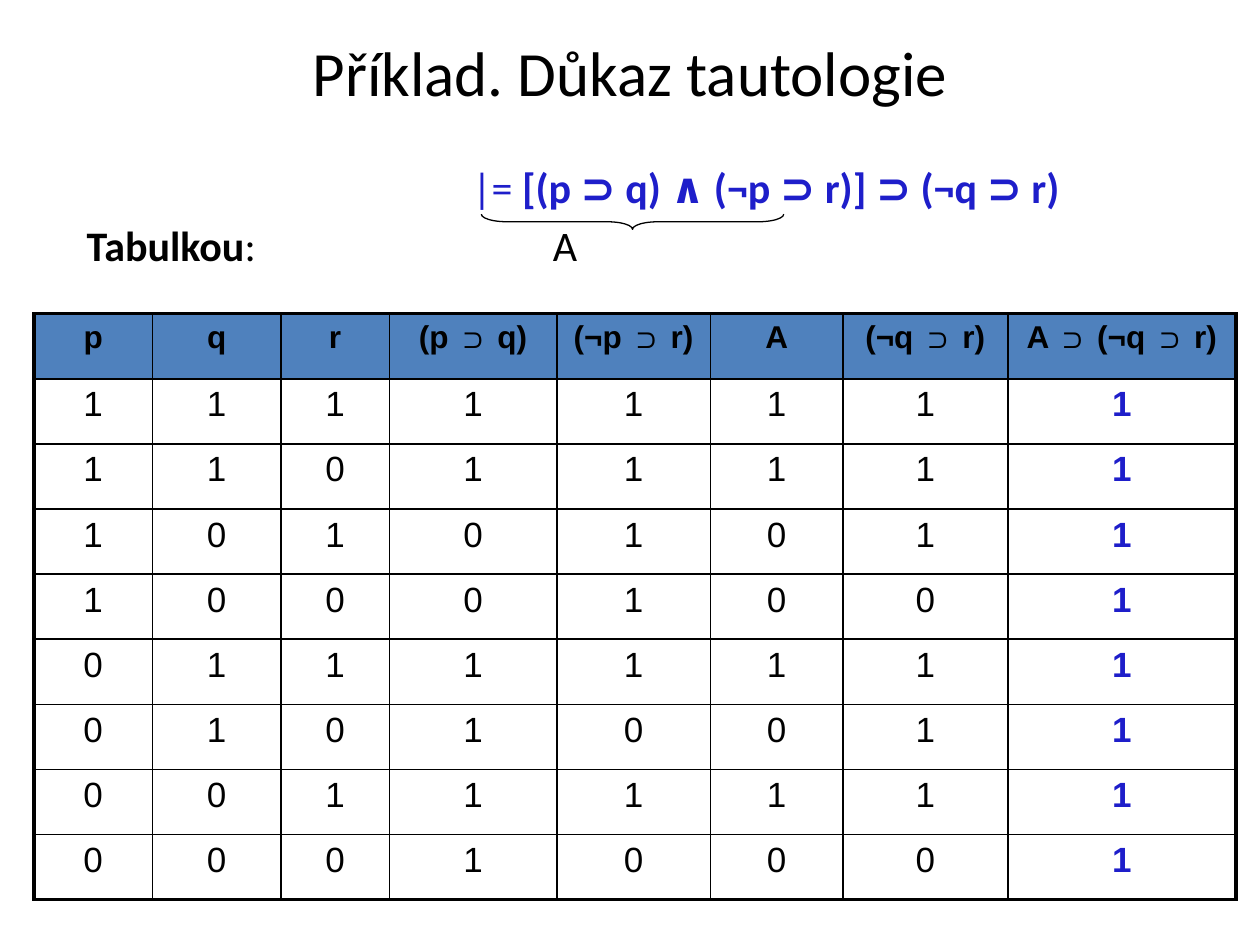
from itertools import product

from lxml.etree import SubElement
from pptx import Presentation
from pptx.dml.color import RGBColor
from pptx.enum.shapes import MSO_SHAPE
from pptx.enum.text import MSO_ANCHOR, PP_ALIGN
from pptx.oxml.ns import qn
from pptx.util import Inches, Pt

BLACK = RGBColor(0x00, 0x00, 0x00)
BLUE = RGBColor(0x1E, 0x1E, 0xCA)
HEADER_BLUE = RGBColor(0x4F, 0x81, 0xBD)
HEADERS = ["p", "q", "r", "(p ⊃ q)", "(¬p ⊃ r)", "A", "(¬q ⊃ r)", "A ⊃ (¬q ⊃ r)"]
COLUMN_WIDTHS = [0.94, 1.02, 0.86, 1.33, 1.22, 1.05, 1.31, 1.81]
ROW_HEIGHT = 4.65 / 9
THIN, THICK = Pt(1), Pt(2.25)


def format_run(run, font_name, size, color, bold=False):
    """Set the font of one run."""
    font = run.font
    font.name = font_name
    font.size = Pt(size)
    font.color.rgb = color
    font.bold = bold


def add_text_box(slide, left, top, width, height, anchor):
    """Add a wrapping text box and return its text frame."""
    shape = slide.shapes.add_textbox(Inches(left), Inches(top), Inches(width), Inches(height))
    text_frame = shape.text_frame
    text_frame.word_wrap = True
    text_frame.vertical_anchor = anchor
    return text_frame


def add_title(slide, text):
    """Add the centred slide title."""
    text_frame = add_text_box(slide, 0.5, 0.3, 9, 0.54, MSO_ANCHOR.MIDDLE)
    text_frame.text = text
    paragraph = text_frame.paragraphs[0]
    paragraph.alignment = PP_ALIGN.CENTER
    format_run(paragraph.runs[0], "Calibri", 36, BLACK)


def fill_tabbed_line(paragraph, tab_position, color, parts):
    """Write (text, bold) parts into a paragraph with one tab stop."""
    tab_list = SubElement(paragraph._p.get_or_add_pPr(), qn("a:tabLst"))
    SubElement(tab_list, qn("a:tab"), pos=str(Inches(tab_position)), algn="l")
    for text, bold in parts:
        run = paragraph.add_run()
        run.text = text
        format_run(run, "Calibri", 24, color, bold)


def add_statement(slide):
    """Add the proved formula and the line that introduces the table."""
    text_frame = add_text_box(slide, 0.59, 1.23, 8.74, 1.1, MSO_ANCHOR.TOP)
    formula = [("\t|= ", False), ("[(p ⊃ q) ∧ (¬p ⊃ r)] ⊃ (¬q ⊃ r)", True)]
    fill_tabbed_line(text_frame.paragraphs[0], 3.06, BLUE, formula)
    paragraph = text_frame.add_paragraph()
    paragraph.space_before = Pt(4.8)
    fill_tabbed_line(paragraph, 3.7, BLACK, [("Tabulkou", True), (":\tA", False)])


def add_brace(slide):
    """Add the brace that marks part A of the formula."""
    shape = slide.shapes.add_shape(
        MSO_SHAPE.RIGHT_BRACE, Inches(4.96), Inches(0.56), Inches(0.12), Inches(2.4))
    shape.rotation = 90
    shape.adjustments[0] = 1.697
    shape.shadow.inherit = False
    shape.fill.background()
    shape.line.color.rgb = BLACK
    shape.line.width = Pt(0.75)


def truth_rows():
    """Return the truth values of every column for each valuation."""
    rows = []
    for p, q, r in product((1, 0), repeat=3):
        p_implies_q = int(not p or q)
        not_p_implies_r = int(p or r)
        conjunction = p_implies_q and not_p_implies_r
        not_q_implies_r = int(q or r)
        whole = int(not conjunction or not_q_implies_r)
        rows.append([p, q, r, p_implies_q, not_p_implies_r, conjunction, not_q_implies_r, whole])
    return rows


def set_borders(cell, thick_sides):
    """Draw black cell borders, thick on the given sides."""
    properties = cell._tc.get_or_add_tcPr()
    for index, side in enumerate("LRTB"):
        width = THICK if side in thick_sides else THIN
        line = properties.makeelement(qn(f"a:ln{side}"), {"w": str(width)})
        fill = SubElement(line, qn("a:solidFill"))
        SubElement(fill, qn("a:srgbClr"), val=str(BLACK))
        properties.insert(index, line)


def fill_cell(cell, text, size, color, bold):
    """Write centred text into a table cell."""
    cell.text_frame.text = text
    paragraph = cell.text_frame.paragraphs[0]
    paragraph.alignment = PP_ALIGN.CENTER
    format_run(paragraph.runs[0], "Arial", size, color, bold)


def add_truth_table(slide):
    """Add the truth table with its header and outer frame."""
    rows = [HEADERS] + truth_rows()
    last_row, last_column = len(rows) - 1, len(HEADERS) - 1
    table = slide.shapes.add_table(
        len(rows), len(HEADERS), Inches(0.27), Inches(2.49),
        Inches(sum(COLUMN_WIDTHS)), Inches(ROW_HEIGHT * len(rows))).table
    table.first_row = False
    table.horz_banding = False
    for column, width in zip(table.columns, COLUMN_WIDTHS):
        column.width = Inches(width)
    for row_index, values in enumerate(rows):
        table.rows[row_index].height = Inches(ROW_HEIGHT)
        for column_index, value in enumerate(values):
            cell = table.cell(row_index, column_index)
            if row_index == 0:
                cell.fill.solid()
                cell.fill.fore_color.rgb = HEADER_BLUE
                fill_cell(cell, value, 18, BLACK, True)
            else:
                cell.fill.background()
                is_result = column_index == last_column
                fill_cell(cell, str(value), 20, BLUE if is_result else BLACK, is_result)
            edges = {"L": column_index == 0, "R": column_index == last_column,
                     "T": row_index == 0, "B": row_index == last_row}
            set_borders(cell, [side for side, is_outer in edges.items() if is_outer])


def main():
    """Build the slide and save it."""
    presentation = Presentation()
    presentation.slide_width = Inches(10)
    presentation.slide_height = Inches(7.5)
    slide = presentation.slides.add_slide(presentation.slide_layouts[6])
    add_title(slide, "Příklad. Důkaz tautologie")
    add_statement(slide)
    add_truth_table(slide)
    add_brace(slide)
    presentation.save("out.pptx")


if __name__ == "__main__":
    main()
